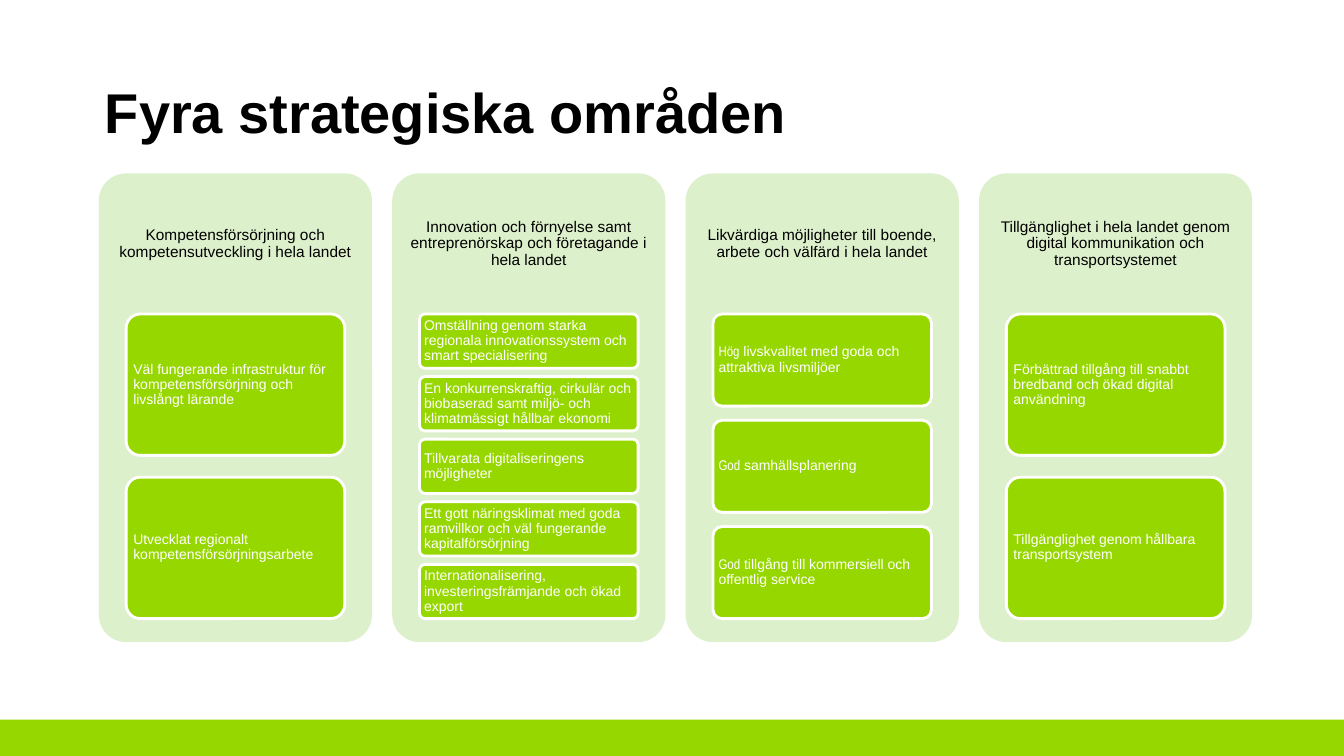
from dataclasses import dataclass

from pptx import Presentation
from pptx.dml.color import RGBColor
from pptx.enum.shapes import MSO_SHAPE
from pptx.enum.text import MSO_ANCHOR, PP_ALIGN
from pptx.util import Inches, Pt

RECTANGLE = MSO_SHAPE.RECTANGLE
ROUNDED = MSO_SHAPE.ROUNDED_RECTANGLE
MIDDLE = MSO_ANCHOR.MIDDLE
LEFT, CENTER = PP_ALIGN.LEFT, PP_ALIGN.CENTER
TITLE_ONLY = 5


@dataclass(frozen=True)
class Theme:
    font: str = "Arial"
    narrow_font: str = "Arial Narrow"
    green: str = "97D700"
    pale_green: str = "DDF0CC"
    white: str = "FFFFFF"
    black: str = "000000"
    title_size: int = 40
    heading_size: int = 11
    card_size: int = 10
    card_border: int = 2
    line_spacing: float = 0.9


THEME = Theme()

SLIDE_WIDTH, SLIDE_HEIGHT = 13.33, 7.5
BAR_HEIGHT = 0.36
PANEL_LEFT, PANEL_TOP = 0.98, 1.72
PANEL_WIDTH, PANEL_HEIGHT = 2.71, 4.65
PANEL_STEP = 2.91
HEADING_HEIGHT = 0.3 * PANEL_HEIGHT
STACK_HEIGHT = 0.65 * PANEL_HEIGHT
CARD_WIDTH = 0.8 * PANEL_WIDTH
CARD_GAP_SHARE = 0.154  # gap between cards as a share of card height

# Each area: heading and its cards; a card is a list of (text, font) runs.
AREAS = [
    ("Kompetensförsörjning och kompetensutveckling i hela landet", [
        [("Väl fungerande infrastruktur för kompetensförsörjning och livslångt lärande ", THEME.font)],
        [("Utvecklat regionalt kompetensförsörjningsarbete", THEME.font)],
    ]),
    ("Innovation och förnyelse samt entreprenörskap och företagande i hela landet", [
        [("Omställning genom starka regionala innovationssystem och smart specialisering", THEME.font)],
        [("En konkurrenskraftig, cirkulär och biobaserad samt miljö- och "
          "klimatmässigt hållbar ekonomi", THEME.font)],
        [("Tillvarata digitaliseringens möjligheter", THEME.font)],
        [("Ett gott näringsklimat med goda ramvillkor och väl fungerande "
          "kapitalförsörjning", THEME.font)],
        [("Internationalisering, investeringsfrämjande och ökad export", THEME.font)],
    ]),
    ("Likvärdiga möjligheter till boende, arbete och välfärd i hela landet", [
        [("Hög", THEME.narrow_font),
         (" livskvalitet med goda och attraktiva livsmiljöer ", THEME.font)],
        [("God", THEME.narrow_font), (" samhällsplanering ", THEME.font)],
        [("God", THEME.narrow_font),
         (" tillgång till kommersiell och offentlig service", THEME.font)],
    ]),
    ("Tillgänglighet i hela landet genom digital kommunikation och transportsystemet", [
        [("Förbättrad tillgång till snabbt bredband och ökad digital användning", THEME.font)],
        [("Tillgänglighet genom hållbara transportsystem", THEME.font)],
    ]),
]


def color(value):
    return RGBColor.from_string(value)


def set_text(shape, runs, size, text_color, alignment, insets, bold=False):
    """Write one vertically centred paragraph of (text, font) runs."""
    frame = shape.text_frame
    frame.word_wrap = True
    frame.vertical_anchor = MIDDLE
    frame.margin_left = frame.margin_right = Inches(insets[0])
    frame.margin_top = frame.margin_bottom = Inches(insets[1])
    paragraph = frame.paragraphs[0]
    paragraph.alignment = alignment
    paragraph.line_spacing = THEME.line_spacing
    for text, font_name in runs:
        run = paragraph.add_run()
        run.text = text
        run.font.name = font_name
        run.font.size = Pt(size)
        run.font.bold = bold
        run.font.color.rgb = color(text_color)


def add_block(slide, kind, left, top, width, height, fill, border=None):
    shape = slide.shapes.add_shape(
        kind, Inches(left), Inches(top), Inches(width), Inches(height))
    shape.shadow.inherit = False
    shape.fill.solid()
    shape.fill.fore_color.rgb = color(fill)
    if border:
        shape.line.color.rgb = color(border)
        shape.line.width = Pt(THEME.card_border)
    else:
        shape.line.fill.background()
    if kind == ROUNDED:
        shape.adjustments[0] = 0.1
    return shape


def add_title(slide, text):
    title = slide.shapes.title
    title.left, title.top = Inches(0.94), Inches(0.79)
    title.width, title.height = Inches(11.44), Inches(0.71)
    set_text(title, [(text, THEME.font)], THEME.title_size, THEME.black,
             LEFT, (0.1, 0.05), bold=True)


def add_cards(slide, left, top, cards):
    """Share the stack height equally between the cards and their gaps."""
    count = len(cards)
    height = STACK_HEIGHT / (count + (count - 1) * CARD_GAP_SHARE)
    step = height * (1 + CARD_GAP_SHARE)
    for row, runs in enumerate(cards):
        card = add_block(slide, ROUNDED, left, top + row * step, CARD_WIDTH,
                         height, THEME.green, THEME.white)
        set_text(card, runs, THEME.card_size, THEME.white, LEFT, (0.03, 0.02))


def add_area(slide, column, heading, cards):
    left = PANEL_LEFT + column * PANEL_STEP
    add_block(slide, ROUNDED, left, PANEL_TOP, PANEL_WIDTH, PANEL_HEIGHT,
              THEME.pale_green)
    heading_box = slide.shapes.add_textbox(
        Inches(left), Inches(PANEL_TOP), Inches(PANEL_WIDTH), Inches(HEADING_HEIGHT))
    set_text(heading_box, [(heading, THEME.font)], THEME.heading_size,
             THEME.black, CENTER, (0.05, 0.05))
    add_cards(slide, left + (PANEL_WIDTH - CARD_WIDTH) / 2,
              PANEL_TOP + HEADING_HEIGHT, cards)


def main():
    presentation = Presentation()
    presentation.slide_width = Inches(SLIDE_WIDTH)
    presentation.slide_height = Inches(SLIDE_HEIGHT)
    slide = presentation.slides.add_slide(presentation.slide_layouts[TITLE_ONLY])
    add_block(slide, RECTANGLE, 0, SLIDE_HEIGHT - BAR_HEIGHT, SLIDE_WIDTH,
              BAR_HEIGHT, THEME.green)
    add_title(slide, "Fyra strategiska områden")
    for column, (heading, cards) in enumerate(AREAS):
        add_area(slide, column, heading, cards)
    presentation.save("out.pptx")


if __name__ == "__main__":
    main()
